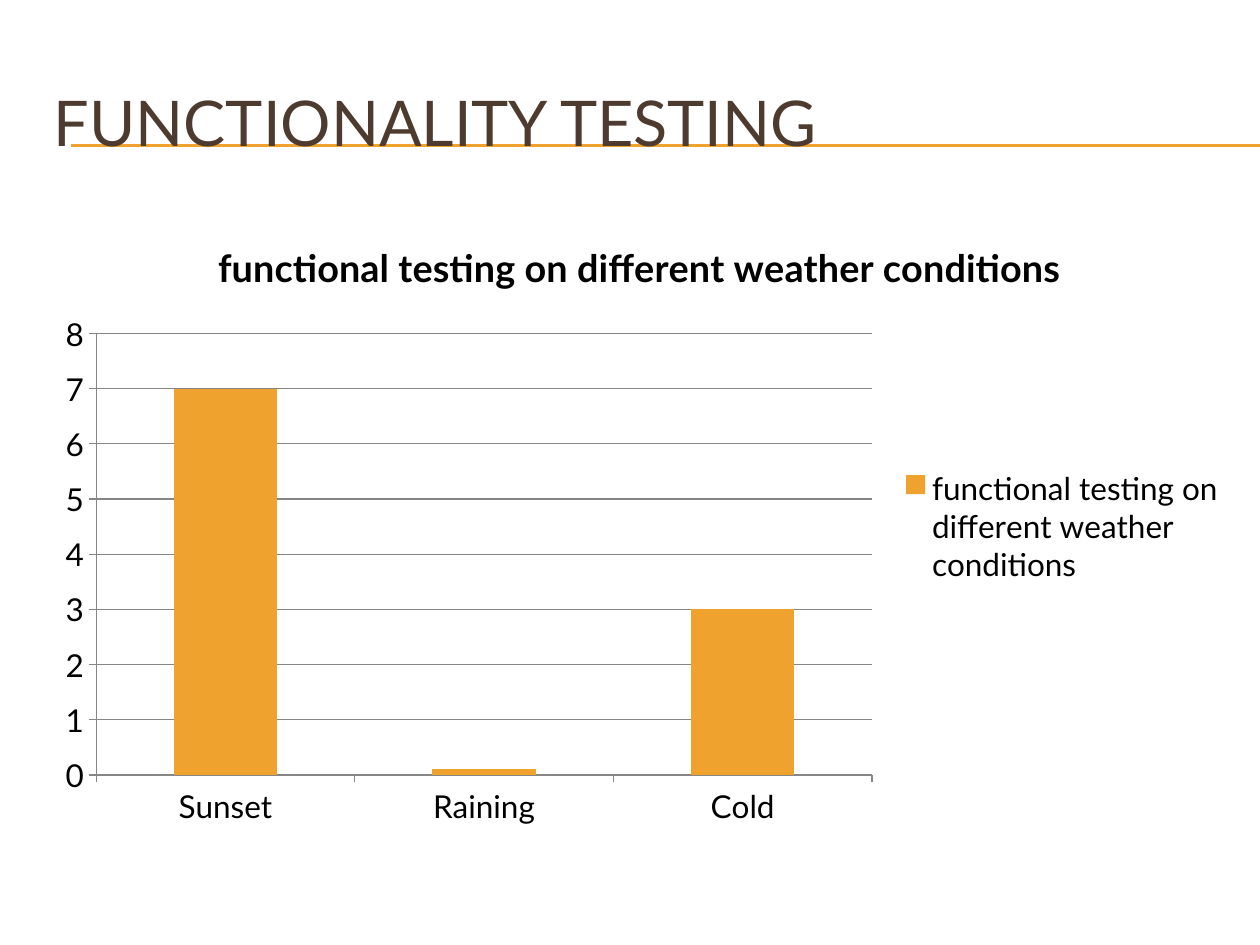
import pptx
import pptx.chart.data
import pptx.dml.color
import pptx.enum.chart
import pptx.enum.shapes
import pptx.enum.text
import pptx.util
from lxml import etree
from pptx.util import Inches

AMBER = "F0A22E"
BROWN = "4E3B30"
BLACK = "000000"
GREY = "868686"


def rgb(value):
    return pptx.dml.color.RGBColor.from_string(value)


class Deck:
    font = "Lato"

    def __init__(self, slide):
        self.slide = slide

    def style(self, font, size, color, bold=False):
        font.name = self.font
        font.size = pptx.util.Pt(size)
        font.bold = bold
        font.color.rgb = rgb(color)

    def rule(self, left, right, y):
        rule = self.slide.shapes.add_connector(
            pptx.enum.shapes.MSO_CONNECTOR.STRAIGHT,
            Inches(left), Inches(y), Inches(right), Inches(y))
        rule.line.color.rgb = rgb(AMBER)
        rule.line.width = pptx.util.Pt(0.75)
        etree.SubElement(rule._element.spPr, pptx.oxml.ns.qn("a:effectLst"))

    def text(self, left, top, width, height, words, size, color):
        frame = self.slide.shapes.add_textbox(
            Inches(left), Inches(top), Inches(width), Inches(height)).text_frame
        frame.word_wrap = True
        frame.vertical_anchor = pptx.enum.text.MSO_ANCHOR.MIDDLE
        run = frame.paragraphs[0].add_run()
        run.text = words
        self.style(run.font, size, color)

    def column_chart(self, left, top, width, height, name, results):
        data = pptx.chart.data.CategoryChartData()
        data.categories = list(results)
        data.add_series(name, list(results.values()))
        chart = self.slide.shapes.add_chart(
            pptx.enum.chart.XL_CHART_TYPE.COLUMN_STACKED,
            Inches(left), Inches(top), Inches(width), Inches(height), data).chart
        self.style(chart.font, 18, BLACK)

        # Chart title and legend
        chart.has_title = True
        heading = chart.chart_title.text_frame.paragraphs[0].add_run()
        heading.text = name
        self.style(heading.font, 21.6, BLACK, bold=True)
        chart.chart_title.include_in_layout = False
        chart.has_legend = True
        chart.legend.position = pptx.enum.chart.XL_LEGEND_POSITION.RIGHT
        chart.legend.include_in_layout = False

        # Columns
        plot = chart.plots[0]
        plot.gap_width = 150
        plot.overlap = 100
        plot.vary_by_categories = False
        columns = plot.series[0].format.fill
        columns.solid()
        columns.fore_color.rgb = rgb(AMBER)

        # Axes and gridlines
        scores = chart.value_axis
        scores.minimum_scale, scores.maximum_scale = 0, 8
        scores.major_unit = 1
        scores.has_major_gridlines = True
        for axis in (chart.category_axis, scores):
            axis.major_tick_mark = pptx.enum.chart.XL_TICK_MARK.OUTSIDE
            axis.minor_tick_mark = pptx.enum.chart.XL_TICK_MARK.NONE
        for part in (chart.category_axis, scores, scores.major_gridlines):
            part.format.line.color.rgb = rgb(GREY)
            part.format.line.width = pptx.util.Pt(0.75)


def main():
    presentation = pptx.Presentation()
    presentation.slide_width = Inches(10)
    presentation.slide_height = Inches(7.5)
    deck = Deck(presentation.slides.add_slide(presentation.slide_layouts[6]))

    # Double rule behind the heading
    for y in (1.15, 1.16):
        deck.rule(0.56, 10, y)

    # Heading
    deck.text(0.33, 0.5, 9.5, 0.92, "FUNCTIONALITY TESTING", 36, BROWN)

    # Results by weather
    deck.column_chart(0.33, 1.7, 9.5, 4.95,
                      "functional testing on different weather conditions",
                      {"Sunset": 7, "Raining": 0.1, "Cold": 3})

    presentation.save("out.pptx")


if __name__ == "__main__":
    main()
